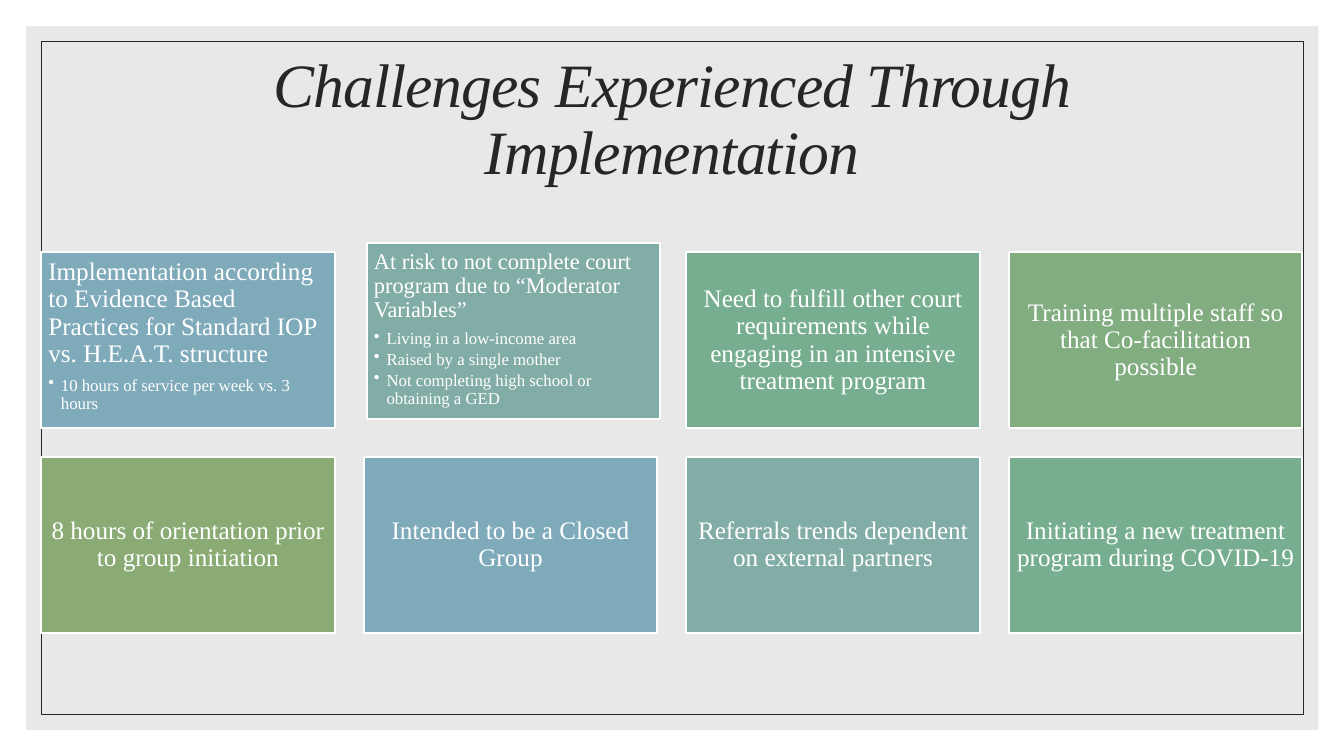
import pptx
import pptx.util
import pptx.dml.color
import pptx.enum.shapes
import pptx.enum.text
import pptx.oxml.ns
from lxml import etree

Pt = pptx.util.Pt
RGBColor = pptx.dml.color.RGBColor
ALIGN = pptx.enum.text.PP_ALIGN
ANCHOR = pptx.enum.text.MSO_ANCHOR
RECTANGLE = pptx.enum.shapes.MSO_SHAPE.RECTANGLE

WHITE = RGBColor(0xFF, 0xFF, 0xFF)
GREY = RGBColor(0xD9, 0xD9, 0xD9)
INK = RGBColor(0x26, 0x26, 0x26)
BLUE = RGBColor(0x7F, 0xAA, 0xBA)
TEAL = RGBColor(0x82, 0xAC, 0xA6)
GREEN = RGBColor(0x77, 0xAE, 0x8F)
SAGE = RGBColor(0x81, 0xAD, 0x81)
OLIVE = RGBColor(0x8B, 0xAB, 0x75)
FONT = "Times New Roman"

COLUMNS = 4
TILE_WIDTH, TILE_HEIGHT = 209.5, 126
GRID_LEFT, GRID_TOP = 29.5, 180
COLUMN_STEP, ROW_STEP = 230.4, 146.2

CHALLENGES = [
    ("Implementation according to Evidence Based Practices for Standard IOP vs. H.E.A.T. structure",
     ["10 hours of service per week vs. 3 hours"], BLUE, 18, (0, 0)),
    ("At risk to not complete court program due to “Moderator Variables”",
     ["Living in a low-income area", "Raised by a single mother",
      "Not completing high school or obtaining a GED"], TEAL, 16, (2.2, -6.5)),
    ("Need to fulfill other court requirements while engaging in an intensive treatment program",
     [], GREEN, 18, (0, 0)),
    ("Training multiple staff so that Co-facilitation possible", [], SAGE, 18, (0, 0)),
    ("8 hours of orientation prior to group initiation", [], OLIVE, 18, (0, 0)),
    ("Intended to be a Closed Group", [], BLUE, 18, (0, 0)),
    ("Referrals trends dependent on external partners", [], TEAL, 18, (0, 0)),
    ("Initiating a new treatment program during COVID-19", [], GREEN, 18, (0, 0)),
]


def add_rectangle(left, top, width, height):
    rectangle = slide.shapes.add_shape(RECTANGLE, Pt(left), Pt(top), Pt(width), Pt(height))
    rectangle.shadow.inherit = False
    return rectangle


def style_paragraph(paragraph, size, color, alignment):
    paragraph.alignment = alignment
    paragraph.line_spacing = 0.9
    for run in paragraph.runs:
        run.font.name = FONT
        run.font.size = Pt(size)
        run.font.color.rgb = color


deck = pptx.Presentation()
deck.slide_width, deck.slide_height = Pt(960), Pt(540)
slide = deck.slides.add_slide(deck.slide_layouts[5])
title = slide.shapes.title

panel = add_rectangle(18.7, 18.7, 923, 502.6)
panel.fill.solid()
panel.fill.fore_color.rgb = GREY
panel.line.fill.background()
panel_color = panel.element.spPr.find(".//" + pptx.oxml.ns.qn("a:srgbClr"))
etree.SubElement(panel_color, pptx.oxml.ns.qn("a:alpha"), val="60000")

frame = add_rectangle(29.5, 29.5, 901.4, 481)
frame.fill.background()
frame.line.color.rgb = INK
frame.line.width = Pt(0.5)

for backdrop in (panel, frame):
    title.element.addprevious(backdrop.element)

title.left, title.top, title.width, title.height = Pt(84), Pt(32.4), Pt(792), Pt(108)
title.text_frame.text = "Challenges Experienced Through Implementation"
title.text_frame.auto_size = pptx.enum.text.MSO_AUTO_SIZE.NONE
title.text_frame.vertical_anchor = ANCHOR.MIDDLE
heading = title.text_frame.paragraphs[0]
style_paragraph(heading, 44, INK, ALIGN.CENTER)
heading.runs[0].font.italic = True
heading.runs[0].font._element.set("spc", "-70")

for index, (challenge, details, color, size, (shift_x, shift_y)) in enumerate(CHALLENGES):
    row, column = divmod(index, COLUMNS)
    tile = add_rectangle(GRID_LEFT + column * COLUMN_STEP + shift_x,
                         GRID_TOP + row * ROW_STEP + shift_y, TILE_WIDTH, TILE_HEIGHT)
    tile.fill.solid()
    tile.fill.fore_color.rgb = color
    tile.line.color.rgb = WHITE
    tile.line.width = Pt(1.5)

    body = tile.text_frame
    body.word_wrap = True
    body.margin_left = body.margin_right = body.margin_top = body.margin_bottom = Pt(5)
    body.vertical_anchor = ANCHOR.TOP if details else ANCHOR.MIDDLE
    body.text = challenge
    style_paragraph(body.paragraphs[0], size, WHITE, ALIGN.LEFT if details else ALIGN.CENTER)
    if details:
        body.paragraphs[0].space_after = Pt(size * 0.35)

    for detail in details:
        bullet = body.add_paragraph()
        bullet.text = detail
        bullet.level = 1
        style_paragraph(bullet, 12, WHITE, ALIGN.LEFT)
        bullet.space_after = Pt(1.8)
        properties = bullet._p.get_or_add_pPr()
        properties.set("marL", str(Pt(9)))
        properties.set("indent", str(Pt(-9)))
        etree.SubElement(properties, pptx.oxml.ns.qn("a:buChar"), char="•")

deck.save("out.pptx")
